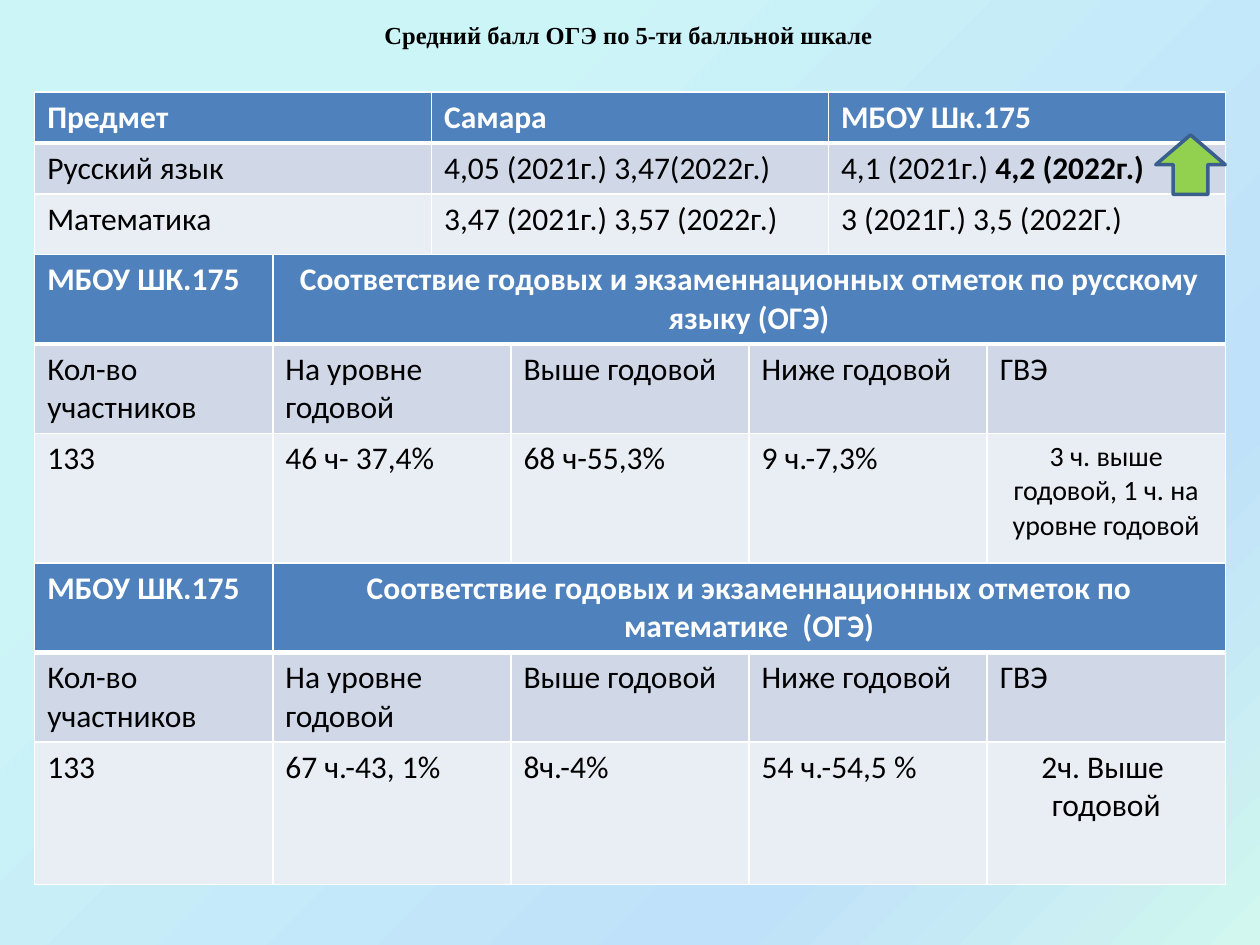
from lxml.etree import SubElement
from pptx import Presentation
from pptx.dml.color import RGBColor
from pptx.enum.shapes import MSO_SHAPE
from pptx.enum.text import MSO_ANCHOR, MSO_AUTO_SIZE, PP_ALIGN
from pptx.oxml.ns import qn
from pptx.util import Cm, Pt

WHITE, BLACK = "FFFFFF", "000000"
HEADER, BAND, PALE = "4F81BD", "D0D8E8", "E9EDF4"
LEFT, WIDTH = 0.7, 24.0
LEVELS = ["Кол-во участников", "На уровне годовой", "Выше годовой",
          "Ниже годовой", "ГВЭ"]


def color(value):
    return RGBColor.from_string(value)


def add_text(p, text, size=18, font="Calibri", fill=BLACK, bold=False, align=PP_ALIGN.LEFT):
    p.alignment = align
    r = p.add_run()
    r.text = text
    r.font.size, r.font.name, r.font.bold = Pt(size), font, bold
    r.font.color.rgb = color(fill)


def set_background(s, stops, angle):
    fill = s.background.fill
    fill.gradient()
    fill.gradient_angle = 360 - angle
    gs_list = s.background._cSld.find(".//" + qn("a:gsLst"))
    for gs in list(gs_list):
        gs_list.remove(gs)
    for position, value in stops:
        gs = SubElement(gs_list, qn("a:gs"), pos=str(position * 1000))
        SubElement(gs, qn("a:srgbClr"), val=value)


def set_borders(cell, top=1, bottom=1):
    tc_pr = cell._tc.get_or_add_tcPr()
    for side, width in (("L", 1), ("R", 1), ("T", top), ("B", bottom)):
        ln = SubElement(tc_pr, qn(f"a:ln{side}"), w=str(Pt(width)))
        SubElement(SubElement(ln, qn("a:solidFill")), qn("a:srgbClr"), val=WHITE)


def add_title(s, text):
    sp = s.shapes.title
    sp.left, sp.top, sp.width, sp.height = Cm(7.5), Cm(0.4), Cm(10.4), Cm(1.6)
    tf = sp.text_frame
    tf.word_wrap, tf.auto_size = True, MSO_AUTO_SIZE.NONE
    tf.vertical_anchor = MSO_ANCHOR.TOP
    tf.margin_left, tf.margin_top, tf.margin_right = Cm(0.25), 0, 0
    add_text(tf.paragraphs[0], text, size=14, font="Times New Roman", bold=True)


def add_grid(s, top, heights, rows):
    """Add a full-width table with a header row; return it."""
    n = len(rows[-1])
    table = s.shapes.add_table(len(rows), n, Cm(LEFT), Cm(top),
                               Cm(WIDTH), Cm(sum(heights))).table
    table.horz_banding = False
    for column in table.columns:
        column.width = Cm(WIDTH / n)
    for i, (height, texts) in enumerate(zip(heights, rows)):
        table.rows[i].height = Cm(height)
        for j in range(n):
            cell = table.cell(i, j)
            set_borders(cell, top=3 if i == 1 else 1, bottom=3 if i == 0 else 1)
            cell.fill.solid()
            cell.fill.fore_color.rgb = color((HEADER, BAND, PALE)[i])
            if j < len(texts) and texts[j]:
                p = cell.text_frame.paragraphs[0]
                add_text(p, texts[j], fill=BLACK if i else WHITE, bold=i == 0)
    return table


def add_exam_table(s, top, heights, heading, results, state_exam, size=18):
    """Add a table that compares year marks with exam marks."""
    table = add_grid(s, top, heights, [["МБОУ ШК.175"], LEVELS, results + [""]])
    table.cell(0, 1).merge(table.cell(0, 4))
    add_text(table.cell(0, 1).text_frame.paragraphs[0], heading,
             fill=WHITE, bold=True, align=PP_ALIGN.CENTER)
    add_text(table.cell(2, 4).text_frame.paragraphs[0], state_exam,
             size=size, align=PP_ALIGN.CENTER)


def add_up_arrow(s):
    sp = s.shapes.add_shape(MSO_SHAPE.UP_ARROW, Cm(23.3), Cm(2.72), Cm(1.4), Cm(1.2))
    sp.shadow.inherit = False
    sp.fill.solid()
    sp.fill.fore_color.rgb = color("92D050")
    sp.line.color.rgb = color("3A5F8C")
    sp.line.width = Pt(2)


def main():
    prs = Presentation()
    prs.slide_width, prs.slide_height = Cm(25.4), Cm(19.05)
    s = prs.slides.add_slide(prs.slide_layouts[5])
    set_background(s, [(0, "CCF5F8"), (25, "CCF5F8"), (75, "BFE1F9"), (100, "D1F7EF")], 45)
    add_title(s, "Средний балл ОГЭ по 5-ти балльной шкале")

    # Marks by year for each exam subject
    add_exam_table(s, 5.13, [1.76, 1.76, 2.68],
                   "Соответствие годовых и экзаменнационных отметок по русскому языку (ОГЭ)",
                   ["133", "46 ч- 37,4%", "68 ч-55,3%", "9 ч.-7,3%"],
                   "3 ч. выше годовой, 1 ч. на уровне годовой", size=16)
    add_exam_table(s, 11.35, [1.78, 1.78, 2.87],
                   "Соответствие годовых и экзаменнационных отметок по математике  (ОГЭ)",
                   ["133", "67 ч.-43, 1%", "8ч.-4%", "54 ч.-54,5 %"],
                   "2ч. Выше  годовой")

    # Average marks: city and school
    averages = add_grid(s, 1.85, [1.03, 1.03, 1.22], [
        ["Предмет", "Самара", "МБОУ Шк.175"],
        ["Русский язык", "4,05 (2021г.) 3,47(2022г.)", "4,1 (2021г.) "],
        ["Математика", "3,47 (2021г.) 3,57 (2022г.)", "3 (2021Г.) 3,5 (2022Г.)"]])
    add_text(averages.cell(1, 2).text_frame.paragraphs[0], "4,2 (2022г.)", bold=True)
    add_up_arrow(s)

    prs.save("out.pptx")


if __name__ == "__main__":
    main()
